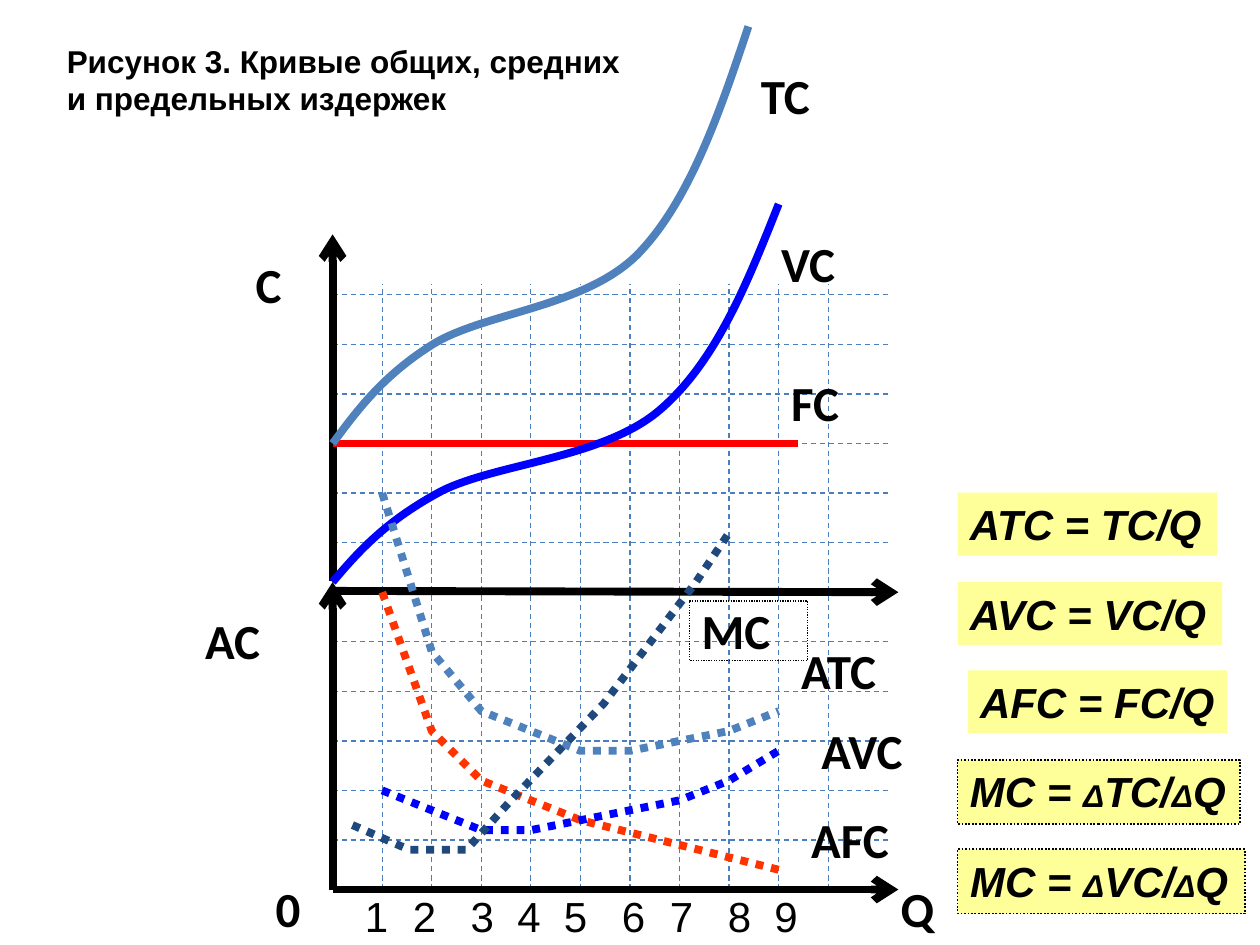
import pptx
import pptx.util
from pptx.dml.color import RGBColor
from pptx.enum.dml import MSO_LINE
from pptx.enum.shapes import MSO_CONNECTOR, MSO_SHAPE
from pptx.enum.text import MSO_ANCHOR, PP_ALIGN
from pptx.oxml import parse_xml
from pptx.oxml.ns import nsdecls, qn
from pptx.util import Inches, Pt

TITLE = "Рисунок 3. Кривые общих, средних\vи предельных издержек"

# Grid origin and step in inches; grid units count from the origin.
X0, Y0, STEP = 2.64, 7.06, 4.72 / 12
COLUMNS, ROWS = 10, 12

AXES = [  # x1, y1, x2, y2
    (2.64, 7.06, 2.64, 4.62),
    (2.64, 7.06, 7.13, 7.06),
    (2.64, 4.61, 2.64, 1.86),
    (2.64, 4.69, 7.13, 4.7),
]
LABELS = [  # text, left, top, width
    ("Q", 7.05, 6.98, 0.63),
    ("0", 2.09, 6.98, 0.63),
    ("AC", 1.53, 4.85, 0.87),
    ("C", 1.93, 2.02, 0.55),
    ("TC", 5.94, 0.52, 0.79),
    ("VC", 6.1, 1.86, 0.79),
    ("FC", 6.18, 2.96, 0.79),
    ("MC", 5.47, 4.77, 0.94),
    ("ATC", 6.26, 5.09, 1.26),
    ("AVC", 6.42, 5.72, 1.26),
    ("AFC", 6.34, 6.43, 1.26),
]
TICKS = {  # number: distance of its centre from the left of the text
    1: 0.17, 2: 0.55, 3: 1.01, 4: 1.38, 5: 1.75,
    6: 2.21, 7: 2.59, 8: 3.05, 9: 3.42,
}
DOTTED_CURVES = {  # colour: points in grid units
    "FF3300": [(1, 6), (2, 3.2), (3, 2.2), (4, 1.8), (5, 1.4), (9, 0.4)],
    "0000FF": list(enumerate([2, 1.6, 1.2, 1.2, 1.4, 1.6, 1.8, 2.2, 2.8], 1)),
    "4F81BD": list(enumerate([8, 4.8, 3.6, 3.2, 2.8, 2.8, 3, 3.2, 3.6], 1)),
    "1F497D": [(0.4, 1.3), (1.55, 0.8), (2.7, 0.8), (3.6, 1.8),
               (5.47, 3.75), (7.33, 6.2), (8, 7.2)],
}
SMOOTH_CURVES = {  # colour: start, then two controls and an end per segment
    "0000FF": [(2.64, 4.62), (2.85, 4.37), (3.07, 4.13), (3.5, 3.9),
               (3.93, 3.68), (4.78, 3.64), (5.23, 3.26),
               (5.68, 2.88), (5.93, 2.25), (6.18, 1.62)],
    "4F81BD": [(2.64, 3.52), (2.84, 3.25), (3.04, 2.98), (3.44, 2.73),
               (3.85, 2.48), (4.64, 2.44), (5.06, 2.02),
               (5.47, 1.6), (5.71, 0.9), (5.94, 0.21)],
}
FORMULAS = [  # text, left, top, width, height, outlined
    ("ATC = TC/Q", 7.6, 3.91, 2.06, 0.5, False),
    ("AVC = VC/Q", 7.6, 4.62, 2.1, 0.5, False),
    ("AFC = FC/Q", 7.68, 5.32, 2.06, 0.5, False),
    ("MC = ΔTC/ΔQ", 7.6, 6.03, 2.24, 0.51, True),
    ("MC = ΔVC/ΔQ", 7.6, 6.74, 2.28, 0.51, True),
]
LABEL_FONT = {"name": "Calibri", "size": Pt(28), "bold": True}
TICK_FONT = {"name": "Arial", "size": Pt(24)}
FORMULA_FONT = {"name": "Arial", "size": Pt(24), "bold": True, "italic": True}
TITLE_FONT = {"name": "Arial", "size": Pt(18), "bold": True}


def rgb(value):
    return RGBColor.from_string(value)


def grid_point(column, row):
    return X0 + column * STEP, Y0 - row * STEP


def format_font(font, values):
    for name, value in values.items():
        setattr(font, name, value)
    font.color.rgb = rgb("000000")


def format_line(line, color, width, dash=None):
    line.color.rgb = rgb(color)
    line.width = Pt(width)
    if dash is not None:
        line.dash_style = dash


def add_line(s, x1, y1, x2, y2, color, width, dash=None, arrow=False):
    ends = [Inches(v) for v in (x1, y1, x2, y2)]
    cn = s.shapes.add_connector(MSO_CONNECTOR.STRAIGHT, *ends)
    format_line(cn.line, color, width, dash)
    sp_pr = cn.element.spPr
    if arrow:
        tail = f'<a:tailEnd {nsdecls("a")} type="arrow"/>'
        sp_pr.find(qn("a:ln")).append(parse_xml(tail))
    sp_pr.append(parse_xml(f'<a:effectLst {nsdecls("a")}/>'))


def add_curve(s, points, color, dash=None):
    start, *rest = [(Inches(x), Inches(y)) for x, y in points]
    builder = s.shapes.build_freeform(*start)
    builder.add_line_segments(rest, close=False)
    sp = builder.convert_to_shape()
    sp.shadow.inherit = False
    sp.fill.background()
    format_line(sp.line, color, 4.5, dash)
    return sp


def bend_segments(sp):
    """Turn each three straight segments into one cubic Bezier segment."""
    lines = list(sp.element.iter(qn("a:lnTo")))
    for i in range(0, len(lines), 3):
        bend = parse_xml(f'<a:cubicBezTo {nsdecls("a")}/>')
        lines[i].addprevious(bend)
        for line in lines[i:i + 3]:
            bend.append(line[0])
            line.getparent().remove(line)


def add_text(s, text, left, top, width, height, font):
    tb = s.shapes.add_textbox(*map(Inches, (left, top, width, height)))
    tb.text_frame.word_wrap = True
    p = tb.text_frame.paragraphs[0]
    p.line_spacing = 0.9
    r = p.add_run()
    r.text = text
    format_font(r.font, font)
    return tb


def add_ticks(s):
    text = "".join(f"\t{n}" for n in TICKS)
    tb = add_text(s, text, 2.72, Y0, 4.02, 0.47, TICK_FONT)
    tabs = "".join(f'<a:tab pos="{Inches(x)}" algn="ctr"/>'
                   for x in TICKS.values())
    p_pr = next(tb.element.iter(qn("a:pPr")))
    p_pr.append(parse_xml(f'<a:tabLst {nsdecls("a")}>{tabs}</a:tabLst>'))


def add_formula(s, text, left, top, width, height, outlined):
    box = map(Inches, (left, top, width, height))
    sp = s.shapes.add_shape(MSO_SHAPE.RECTANGLE, *box)
    sp.shadow.inherit = False
    sp.fill.solid()
    sp.fill.fore_color.rgb = rgb("FFFF99")
    if outlined:
        format_line(sp.line, "000000", 1, MSO_LINE.ROUND_DOT)
    else:
        sp.line.fill.background()
    tf = sp.text_frame
    tf.word_wrap = False
    tf.vertical_anchor = MSO_ANCHOR.TOP
    p = tf.paragraphs[0]
    p.alignment = PP_ALIGN.LEFT
    p.space_before = Pt(6)
    for part in text.replace("Δ", "|Δ|").split("|"):
        r = p.add_run()
        r.text = part
        size = Pt(18 if part == "Δ" else 24)
        format_font(r.font, {**FORMULA_FONT, "size": size})


def add_title(s):
    title = s.shapes.title
    box = {"left": 0.43, "top": 0.28, "width": 4.67, "height": 0.7}
    for name, value in box.items():
        setattr(title, name, Inches(value))
    tf = title.text_frame
    tf.text = TITLE
    tf.word_wrap = False
    tf.vertical_anchor = MSO_ANCHOR.MIDDLE
    p = tf.paragraphs[0]
    p.alignment = PP_ALIGN.LEFT
    for r in p.runs:
        format_font(r.font, TITLE_FONT)


def main():
    prs = pptx.Presentation()
    prs.slide_width, prs.slide_height = Inches(10), Inches(7.5)
    s = prs.slides.add_slide(prs.slide_layouts[5])
    add_title(s)
    rows = [grid_point(0, n)[1] for n in range(1, ROWS + 1)]
    columns = [grid_point(n, 0)[0] for n in range(1, COLUMNS + 1)]
    grid = [(X0, y, 7.05, y) for y in rows]
    grid += [(x, Y0, x, 2.25) for x in columns]
    for ends in grid:
        add_line(s, *ends, "4B7EBC", 0.75, MSO_LINE.DASH)
    for axis in AXES:
        add_line(s, *axis, "000000", 4.5, arrow=True)
    for text, left, top, width in LABELS:
        tb = add_text(s, text, left, top, width, 0.47, LABEL_FONT)
        if text == "MC":
            format_line(tb.line, "000000", 0.75, MSO_LINE.ROUND_DOT)
    add_ticks(s)
    add_line(s, *grid_point(0, 9), *grid_point(9.4, 9), "FF0000", 4.5)
    for color, points in SMOOTH_CURVES.items():
        bend_segments(add_curve(s, points, color))
    for color, points in DOTTED_CURVES.items():
        inches = [grid_point(*pt) for pt in points]
        add_curve(s, inches, color, MSO_LINE.ROUND_DOT)
    for formula in FORMULAS:
        add_formula(s, *formula)
    prs.save("out.pptx")


if __name__ == "__main__":
    main()
